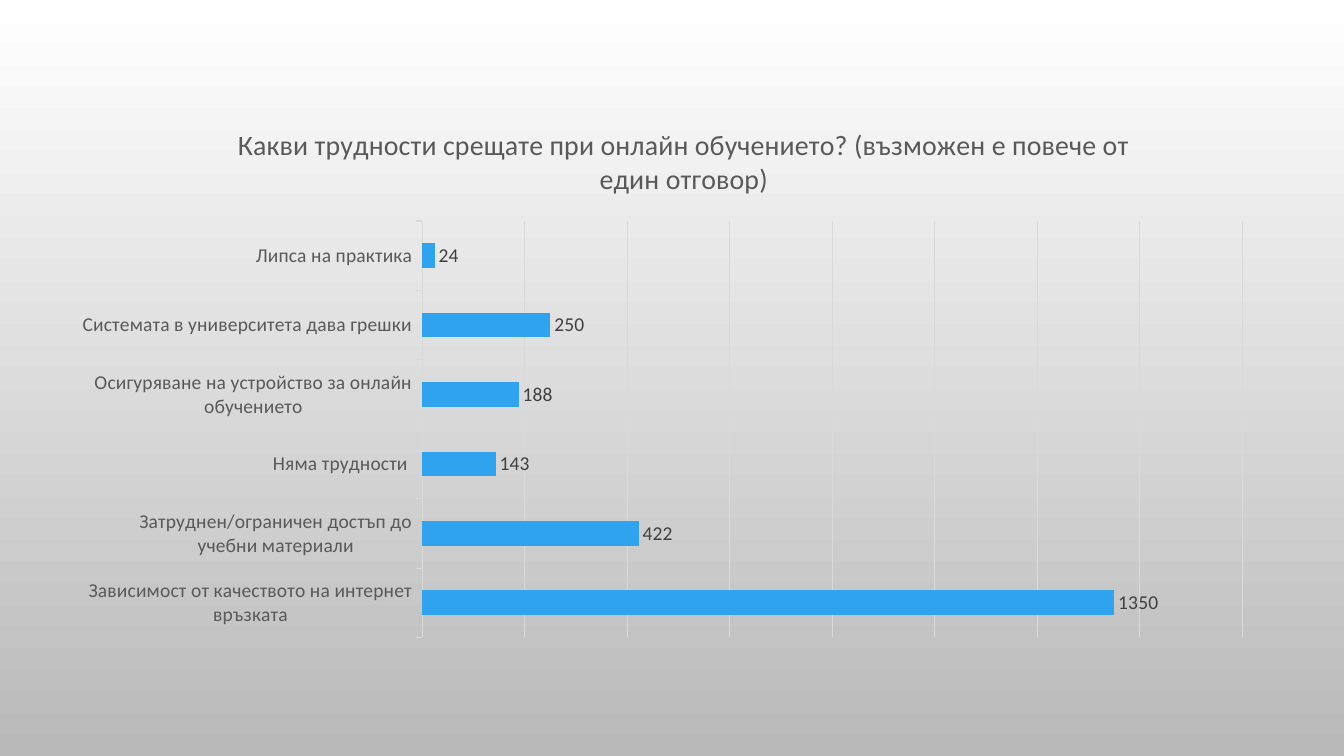
from lxml import etree
from pptx import Presentation
from pptx.chart.data import CategoryChartData
from pptx.dml.color import RGBColor
from pptx.enum.chart import XL_CHART_TYPE, XL_LABEL_POSITION, XL_TICK_MARK
from pptx.oxml.ns import qn
from pptx.util import Pt

BAR_CLUSTERED = XL_CHART_TYPE.BAR_CLUSTERED
OUTSIDE_END = XL_LABEL_POSITION.OUTSIDE_END
TICK_OUTSIDE = XL_TICK_MARK.OUTSIDE
TICK_NONE = XL_TICK_MARK.NONE

WHITE = RGBColor(0xFF, 0xFF, 0xFF)
SILVER = RGBColor(0xB9, 0xB9, 0xB9)
BLUE = RGBColor(0x2F, 0xA3, 0xEE)
LIGHT_GRAY = RGBColor(0xD9, 0xD9, 0xD9)
GRAY = RGBColor(0x59, 0x59, 0x59)
DARK_GRAY = RGBColor(0x40, 0x40, 0x40)
BLACK = RGBColor(0, 0, 0)

TITLE = "Какви трудности срещате при онлайн обучението? (възможен е повече от един отговор)"
DIFFICULTIES = [
    ("Зависимост от качеството на интернет връзката", 1350),
    ("Затруднен/ограничен достъп до учебни материали", 422),
    ("Няма трудности ", 143),
    ("Осигуряване на устройство за онлайн обучението", 188),
    ("Системата в университета дава грешки", 250),
    ("Липса на практика", 24),
]
CHART_BOX = (59, 73.5, 854, 402)
PLOT_LAYOUT = [
    ("layoutTarget", "inner"), ("xMode", "edge"), ("yMode", "edge"),
    ("x", "0.28"), ("y", "0.21"), ("w", "0.69"), ("h", "0.74"),
]


def style_font(font, size, color):
    font.name = "Calibri"
    font.size = Pt(size)
    font.bold = False
    font.color.rgb = color


def style_line(line):
    line.color.rgb = LIGHT_GRAY
    line.width = Pt(0.75)


def place_plot(chart):
    plot_area = chart.element.find(qn("c:chart")).find(qn("c:plotArea"))
    layout = plot_area.find(qn("c:layout"))
    if layout is None:
        layout = etree.Element(qn("c:layout"))
        plot_area.insert(0, layout)
    manual = etree.SubElement(layout, qn("c:manualLayout"))
    for name, value in PLOT_LAYOUT:
        etree.SubElement(manual, qn("c:" + name), val=value)


def set_background(slide):
    fill = slide.background.fill
    fill.gradient()
    fill.gradient_angle = 270
    for stop, color, position in zip(fill.gradient_stops, (WHITE, SILVER), (0, 1)):
        stop.color.rgb = color
        stop.position = position


def add_difficulties_chart(slide):
    data = CategoryChartData()
    data.categories = [name for name, count in DIFFICULTIES]
    data.add_series("Series 1", [count for name, count in DIFFICULTIES])
    box = [Pt(length) for length in CHART_BOX]
    chart = slide.shapes.add_chart(BAR_CLUSTERED, *box, data).chart
    style_font(chart.font, 10, BLACK)
    chart.has_legend = False

    chart.has_title = True
    chart.chart_title.include_in_layout = False
    title_frame = chart.chart_title.text_frame
    title_frame.text = TITLE
    style_font(title_frame.paragraphs[0].font, 20, GRAY)

    category_axis = chart.category_axis
    category_axis.major_tick_mark = TICK_OUTSIDE
    category_axis.minor_tick_mark = TICK_NONE
    style_font(category_axis.tick_labels.font, 14, GRAY)
    style_line(category_axis.format.line)

    value_axis = chart.value_axis
    value_axis.visible = False
    value_axis.minimum_scale = 0
    value_axis.maximum_scale = 1600
    value_axis.major_unit = 200
    value_axis.has_major_gridlines = True
    style_line(value_axis.major_gridlines.format.line)

    plot = chart.plots[0]
    plot.gap_width = 182
    plot.vary_by_categories = False
    series = plot.series[0]
    series.format.fill.solid()
    series.format.fill.fore_color.rgb = BLUE
    labels = series.data_labels
    labels.show_value = True
    labels.position = OUTSIDE_END
    style_font(labels.font, 14, DARK_GRAY)
    place_plot(chart)


def main():
    presentation = Presentation()
    presentation.slide_width = Pt(960)
    presentation.slide_height = Pt(540)
    slide = presentation.slides.add_slide(presentation.slide_layouts[6])
    set_background(slide)
    add_difficulties_chart(slide)
    presentation.save("out.pptx")


if __name__ == "__main__":
    main()
